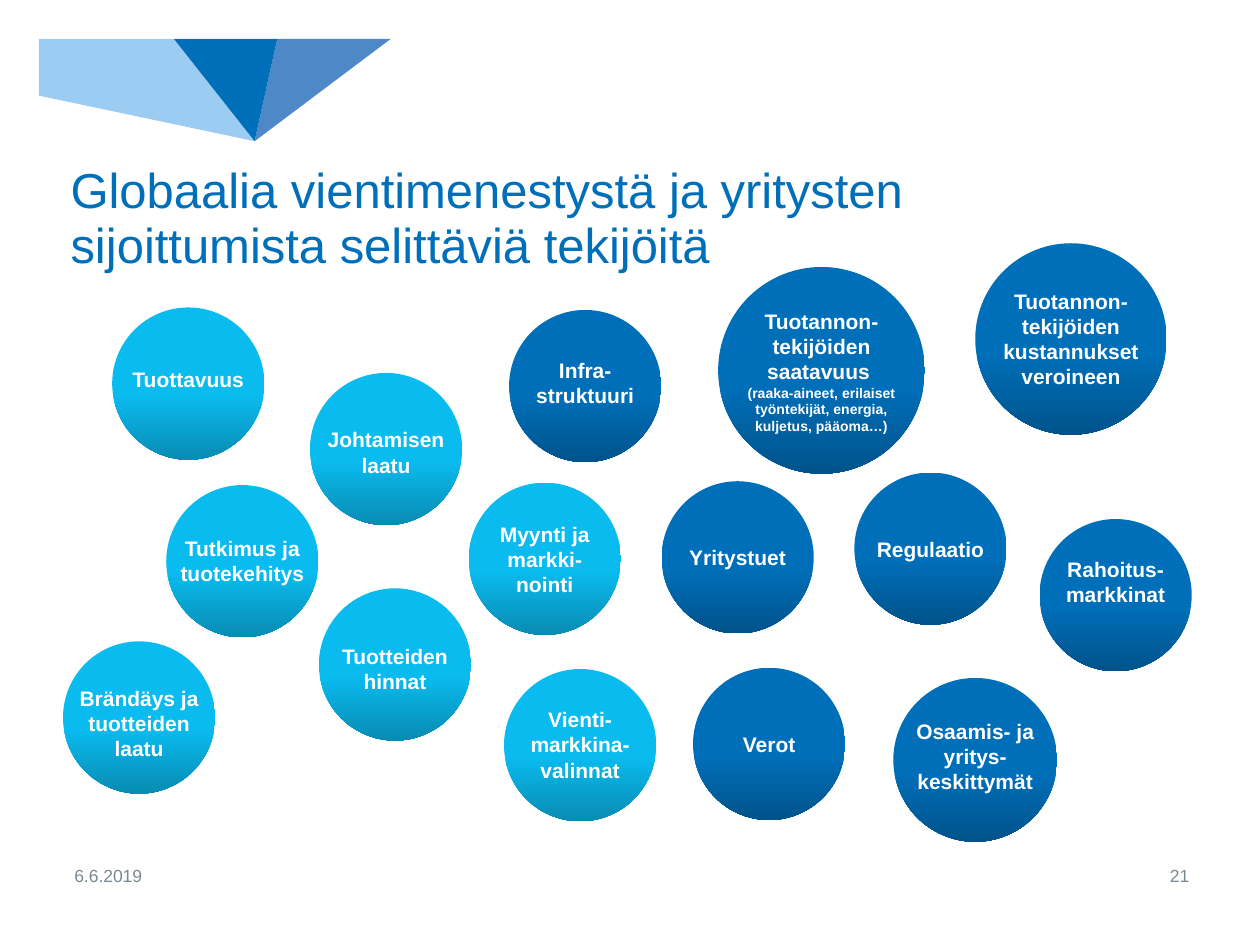
from pptx import Presentation
from pptx import util as u
from pptx.dml.color import RGBColor
from pptx.enum import shapes, text

Pt = u.Pt
BLUE = RGBColor(0x00, 0x6F, 0xB9)
NAVY = RGBColor(0x00, 0x53, 0x8B)
CYAN = RGBColor(0x0A, 0xBB, 0xEF)
TEAL = RGBColor(0x08, 0x8C, 0xB3)
PALE = RGBColor(0x9C, 0xCC, 0xF1)
STEEL = RGBColor(0x4F, 0x88, 0xC7)
GREY = RGBColor(0x7A, 0x8A, 0x90)
WHITE = RGBColor(0xFF, 0xFF, 0xFF)

TIP = (145.5, 80.7)
FACETS = [
    (STEEL, [(223.2, 22.3), (158.4, 22.3), TIP]),
    (PALE, [(22.3, 54.7), TIP, (99.4, 22.3), (22.3, 22.3)]),
    (BLUE, [(158.4, 22.3), (99.4, 22.3), TIP]),
]
FIRM = [
    (64.1, 175.7, 87, 205.9, 1, "Tuottavuus"),
    (177.1, 213.1, 87, 240.5, 2, "Johtamisen laatu"),
    (95, 277.2, 87, 302.4, 2, "Tutkimus ja tuotekehitys"),
    (267.8, 275.8, 87, 294.5, 3, "Myynti ja markki-nointi"),
    (36, 366.5, 87, 388.1, 3, "Brändäys ja tuotteiden laatu"),
    (182.2, 336.2, 87, 364.3, 2, "Tuotteiden hinnat"),
    (288, 382.3, 87, 400.3, 3, "Vienti-markkina-valinnat"),
]
STATE = [
    (410.4, 152.6, 118.1, 172.8, 5, "Tuotannon-\vtekijöiden saatavuus \v",
     "(raaka-aineet, erilaiset työntekijät, energia, kuljetus, pääoma…)"),
    (557.3, 139, 109.4, 161.3, 4, "Tuotannon-tekijöiden kustannukset veroineen"),
    (290.9, 177.1, 87, 200.9, 2, "Infra-struktuuri"),
    (510.5, 387.4, 93.6, 406.8, 3, "Osaamis- ja yritys-keskittymät"),
    (378, 275, 87, 307.4, 1, "Yritystuet"),
    (396, 381.6, 87, 414.7, 1, "Verot"),
    (488.2, 270, 87, 303.1, 1, "Regulaatio"),
    (594, 296.6, 87, 314.6, 2, "Rahoitus-markkinat"),
]


class Deck:
    """Holds the style and the current slide; lengths are in points."""

    def __init__(self, face="Arial"):
        self.face = face
        self.prs = Presentation()
        self.prs.slide_width, self.prs.slide_height = Pt(720), Pt(540)
        self.slide = self.prs.slides.add_slide(self.prs.slide_layouts[5])

    def style(self, para, size, color, align, bold=False):
        para.alignment = align
        font = para.font
        font.name, font.size, font.bold = self.face, Pt(size), bold
        font.color.rgb = color

    def title(self, words, x, y, w, h):
        box = self.slide.shapes.title
        box.left, box.top, box.width, box.height = Pt(x), Pt(y), Pt(w), Pt(h)
        frame = box.text_frame
        frame.auto_size = text.MSO_AUTO_SIZE.NONE
        frame.vertical_anchor = text.MSO_ANCHOR.MIDDLE
        para = frame.paragraphs[0]
        para.text = words
        para.line_spacing = 0.95
        self.style(para, 28, BLUE, text.PP_ALIGN.LEFT)

    def facet(self, color, points):
        pen = self.slide.shapes.build_freeform(*map(Pt, points[0]))
        pen.add_line_segments([(Pt(x), Pt(y)) for x, y in points[1:]])
        shape = pen.convert_to_shape()
        shape.shadow.inherit = False
        shape.fill.solid()
        shape.fill.fore_color.rgb = color
        shape.line.fill.background()

    def footer(self, words, x, w, align):
        box = self.slide.shapes.add_textbox(Pt(x), Pt(491), Pt(w), Pt(18))
        frame = box.text_frame
        frame.word_wrap = True
        frame.vertical_anchor = text.MSO_ANCHOR.MIDDLE
        frame.margin_left = frame.margin_right = 0
        frame.margin_top = frame.margin_bottom = 0
        frame.text = words
        self.style(frame.paragraphs[0], 10, GREY, align)

    def ball(self, colors, x, y, d, top, rows, words, note=None):
        group = self.slide.shapes.add_group_shape().shapes
        disc = group.add_shape(shapes.MSO_SHAPE.OVAL, Pt(x), Pt(y), Pt(d), Pt(d))
        disc.shadow.inherit = False
        disc.line.fill.background()
        disc.fill.gradient()
        disc.fill.gradient_angle = 270
        for stop, color, place in zip(disc.fill.gradient_stops, colors, (0.57, 1)):
            stop.color.rgb = color
            stop.position = place
        box = group.add_textbox(Pt(x), Pt(top), Pt(d), Pt(7.2 + 14.6 * rows))
        frame = box.text_frame
        frame.word_wrap = True
        para = frame.paragraphs[0]
        para.text = words
        self.style(para, 12, WHITE, text.PP_ALIGN.CENTER, True)
        if note:
            run = para.add_run()
            run.text = note
            run.font.size = Pt(8)


def main():
    deck = Deck()
    for color, points in FACETS:
        deck.facet(color, points)
    deck.footer("6.6.2019", 42.5, 64.8, text.PP_ALIGN.LEFT)
    deck.footer("21", 649.4, 30.2, text.PP_ALIGN.RIGHT)
    deck.title("Globaalia vientimenestystä ja yritysten \v"
               "sijoittumista selittäviä tekijöitä", 33.1, 88.6, 648, 73.4)
    for colors, balls in (((CYAN, TEAL), FIRM), ((BLUE, NAVY), STATE)):
        for ball in balls:
            deck.ball(colors, *ball)
    deck.prs.save("out.pptx")


if __name__ == "__main__":
    main()
